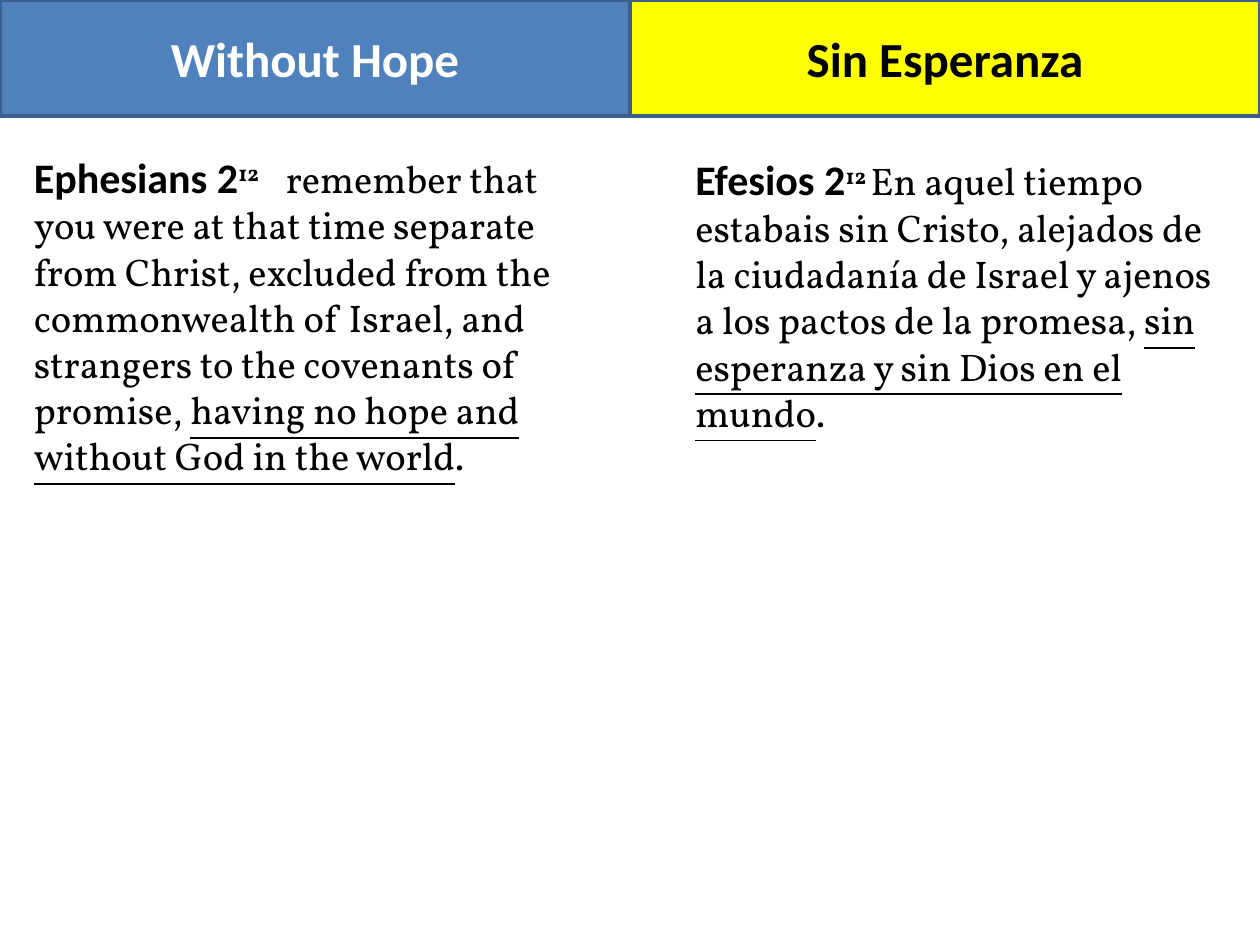
"""Builds a bilingual slide that sets a verse in English beside Spanish."""
import pptx
import pptx.dml.color
import pptx.enum.shapes
import pptx.enum.text
import pptx.util

Inches = pptx.util.Inches
Pt = pptx.util.Pt
RGB = pptx.dml.color.RGBColor.from_string

COLORS = {
    "blue": "4F81BD",
    "yellow": "FFFF00",
    "edge": "3A5F8C",
    "white": "FFFFFF",
    "black": "000000",
}
FORMATS = {
    "head": {"name": "Calibri", "size": Pt(28), "bold": True},
    "book": {"name": "Calibri", "size": Pt(24), "bold": True},
    "verse": {"name": "Vollkorn", "size": Pt(22), "bold": True},
    "body": {"name": "Vollkorn", "size": Pt(22), "bold": False},
    "key": {"name": "Vollkorn", "size": Pt(22), "bold": False, "underline": True},
}
HEADS = [
    ("Without Hope", "blue", "white"),
    ("Sin Esperanza", "yellow", "black"),
]
TEXTS = [
    ((0.17, 1.15, 4.58, 2.73), [
        ("book", "Ephesians 2"),
        ("verse", "12\t"),
        ("body", "remember that you were at that time separate from Christ, "
                 "excluded from the commonwealth of Israel, and strangers "
                 "to the covenants of promise, "),
        ("key", "having no hope and without God in the world"),
        ("body", "."),
    ]),
    ((5.42, 1.17, 4.42, 2.36), [
        ("book", "Efesios 2"),
        ("verse", "12 "),
        ("body", "En aquel tiempo estabais sin Cristo, alejados de la "
                 "ciudadanía de Israel y ajenos a los pactos de la promesa, "),
        ("key", "sin esperanza y sin Dios en el mundo"),
        ("body", "."),
    ]),
]


def add_run(para, text, style, color):
    """Adds a run of text in a named style."""
    run = para.add_run()
    run.text = text
    for key, value in FORMATS[style].items():
        setattr(run.font, key, value)
    run.font.color.rgb = RGB(COLORS[color])
    if style == "verse":
        run._r.get_or_add_rPr().set("baseline", "30000")


deck = pptx.Presentation()
deck.slide_width = Inches(10)
deck.slide_height = Inches(7.5)
slide = deck.slides.add_slide(deck.slide_layouts[6])

for place, parts in TEXTS:
    box = slide.shapes.add_textbox(*map(Inches, place))
    frame = box.text_frame
    frame.word_wrap = True
    frame.auto_size = pptx.enum.text.MSO_AUTO_SIZE.SHAPE_TO_FIT_TEXT
    for style, text in parts:
        add_run(frame.paragraphs[0], text, style, "black")

for col, (text, fill, color) in enumerate(HEADS):
    bar = slide.shapes.add_shape(
        pptx.enum.shapes.MSO_SHAPE.RECTANGLE,
        Inches(5 * col), Inches(0), Inches(5), Inches(0.92))
    bar.shadow.inherit = False
    bar.fill.solid()
    bar.fill.fore_color.rgb = RGB(COLORS[fill])
    bar.line.color.rgb = RGB(COLORS["edge"])
    bar.line.width = Pt(2)
    bar.text_frame.vertical_anchor = pptx.enum.text.MSO_ANCHOR.MIDDLE
    para = bar.text_frame.paragraphs[0]
    para.alignment = pptx.enum.text.PP_ALIGN.CENTER
    add_run(para, text, "head", color)

deck.save("out.pptx")
